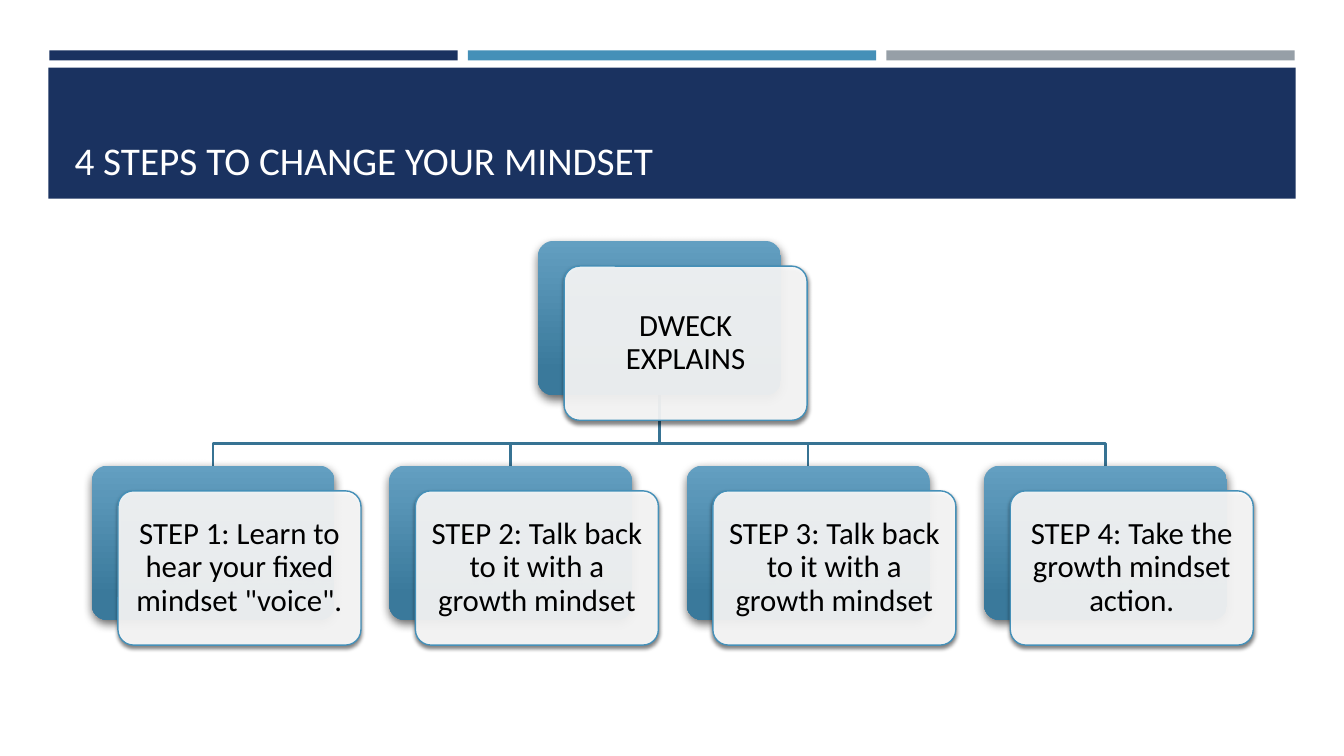
from dataclasses import dataclass

from lxml import etree
from pptx import Presentation
from pptx import util as u
from pptx.dml.color import RGBColor
from pptx.enum import shapes, text
from pptx.oxml.ns import qn

FONT = "Calibri"
NAVY, BLUE, GREY, WHITE, BLACK = "1A3260", "4590B8", "969FA7", "FFFFFF", "000000"
GRADIENT_TOP, GRADIENT_BOTTOM, BRANCH = "639FC1", "3A799B", "377393"

BAR_LEFT, BAR_TOP, BAR_PITCH, BAR_WIDTH, BAR_HEIGHT = 0.49, 0.5, 4.15, 4.05, 0.1
GRID_LEFT, GRID_TOP, COLUMN, ROW = 0.91, 2.39, 2.95, 2.23
CARD_WIDTH, CARD_HEIGHT = 2.41, 1.53
SHIFT_X, SHIFT_Y = 0.26, 0.25
BRANCH_RISE = 0.22


@dataclass(frozen=True)
class Box:
    left: float
    top: float
    width: float
    height: float


@dataclass(frozen=True)
class Shadow:
    opacity: int
    blur: float
    distance: float
    angle: int


@dataclass(frozen=True)
class Card:
    column: float
    row: int
    label: str

    @property
    def back(self) -> Box:
        return Box(GRID_LEFT + self.column * COLUMN, GRID_TOP + self.row * ROW,
                   CARD_WIDTH, CARD_HEIGHT)

    @property
    def front(self) -> Box:
        return Box(self.back.left + SHIFT_X, self.back.top + SHIFT_Y,
                   CARD_WIDTH, CARD_HEIGHT)

    @property
    def middle(self) -> float:
        return self.back.left + CARD_WIDTH / 2


BACK_SHADOW = Shadow(60, 7, 3, 84)
FRONT_SHADOW = Shadow(55, 3, 2, 90)
ROOT = Card(1.5, 0, "DWECK EXPLAINS")
STEPS = [Card(column, 1, label) for column, label in enumerate([
    'STEP 1: Learn to hear your fixed mindset "voice".',
    "STEP 2: Talk back to it with a growth mindset",
    "STEP 3: Talk back to it with a growth mindset",
    "STEP 4: Take the growth mindset action.",
])]


def colour(value: str) -> RGBColor:
    return RGBColor.from_string(value)


def add_block(page, kind, box: Box, fill: str):
    shape = page.shapes.add_shape(kind, u.Inches(box.left), u.Inches(box.top),
                                  u.Inches(box.width), u.Inches(box.height))
    shape.shadow.inherit = False
    shape.fill.solid()
    shape.fill.fore_color.rgb = colour(fill)
    shape.line.fill.background()
    return shape


def add_rounded(page, box: Box, fill: str, shadow: Shadow):
    shape = add_block(page, shapes.MSO_SHAPE.ROUNDED_RECTANGLE, box, fill)
    shape.adjustments[0] = 0.1
    effects = shape._element.spPr.find(qn("a:effectLst"))
    outer = etree.SubElement(effects, qn("a:outerShdw"),
                             blurRad=str(u.Pt(shadow.blur)), dist=str(u.Pt(shadow.distance)),
                             dir=str(shadow.angle * 60000), algn="ctr", rotWithShape="0")
    tint = etree.SubElement(outer, qn("a:srgbClr"), val=BLACK)
    etree.SubElement(tint, qn("a:alpha"), val=str(shadow.opacity * 1000))
    return shape


def write(shape, words: str, size: int, ink: str, align, anchor,
          side: float, edge: float) -> None:
    frame = shape.text_frame
    frame.word_wrap = True
    frame.vertical_anchor = anchor
    frame.margin_left = frame.margin_right = u.Inches(side)
    frame.margin_top = frame.margin_bottom = u.Inches(edge)
    para = frame.paragraphs[0]
    para.text = words
    para.alignment = align
    para.line_spacing = 0.9
    para.font.name = FONT
    para.font.size = u.Pt(size)
    para.font.color.rgb = colour(ink)


def add_header(page) -> None:
    banner = add_block(page, shapes.MSO_SHAPE.RECTANGLE, Box(0.48, 0.67, 12.37, 1.3), NAVY)
    write(banner, "4 STEPS TO CHANGE YOUR MINDSET", 28, WHITE,
          text.PP_ALIGN.LEFT, text.MSO_ANCHOR.BOTTOM, 0.26, 0.14)
    for index, fill in enumerate([NAVY, BLUE, GREY]):
        add_block(page, shapes.MSO_SHAPE.RECTANGLE,
                  Box(BAR_LEFT + index * BAR_PITCH, BAR_TOP, BAR_WIDTH, BAR_HEIGHT), fill)


def add_branch(page, parent: Card, child: Card) -> None:
    bend = child.back.top - BRANCH_RISE
    start, *rest = [(u.Inches(x), u.Inches(y)) for x, y in [
        (parent.middle, parent.back.top + CARD_HEIGHT),
        (parent.middle, bend),
        (child.middle, bend),
        (child.middle, child.back.top),
    ]]
    builder = page.shapes.build_freeform(*start)
    builder.add_line_segments(rest, close=False)
    branch = builder.convert_to_shape()
    branch.shadow.inherit = False
    branch.fill.background()
    branch.line.color.rgb = colour(BRANCH)
    branch.line.width = u.Pt(1.75)


def add_card(page, card: Card) -> None:
    back = add_rounded(page, card.back, BLUE, BACK_SHADOW)
    back.fill.gradient()
    back.fill.gradient_angle = 270
    stops = [(0, GRADIENT_TOP), (0.84, GRADIENT_BOTTOM)]
    for stop, (position, shade) in zip(back.fill.gradient_stops, stops):
        stop.position = position
        stop.color.rgb = colour(shade)

    front = add_rounded(page, card.front, WHITE, FRONT_SHADOW)
    tint = front._element.spPr.find(qn("a:solidFill")).find(qn("a:srgbClr"))
    etree.SubElement(tint, qn("a:alpha"), val="90000")
    front.line.color.rgb = colour(BLUE)
    front.line.width = u.Pt(1)
    write(front, card.label, 22, BLACK,
          text.PP_ALIGN.CENTER, text.MSO_ANCHOR.MIDDLE, 0.09, 0.09)


def main() -> None:
    deck = Presentation()
    deck.slide_width, deck.slide_height = u.Inches(13.33), u.Inches(7.5)
    page = deck.slides.add_slide(deck.slide_layouts[6])
    add_header(page)
    for step in STEPS:
        add_branch(page, ROOT, step)
    for card in [ROOT, *STEPS]:
        add_card(page, card)
    deck.save("out.pptx")


if __name__ == "__main__":
    main()
